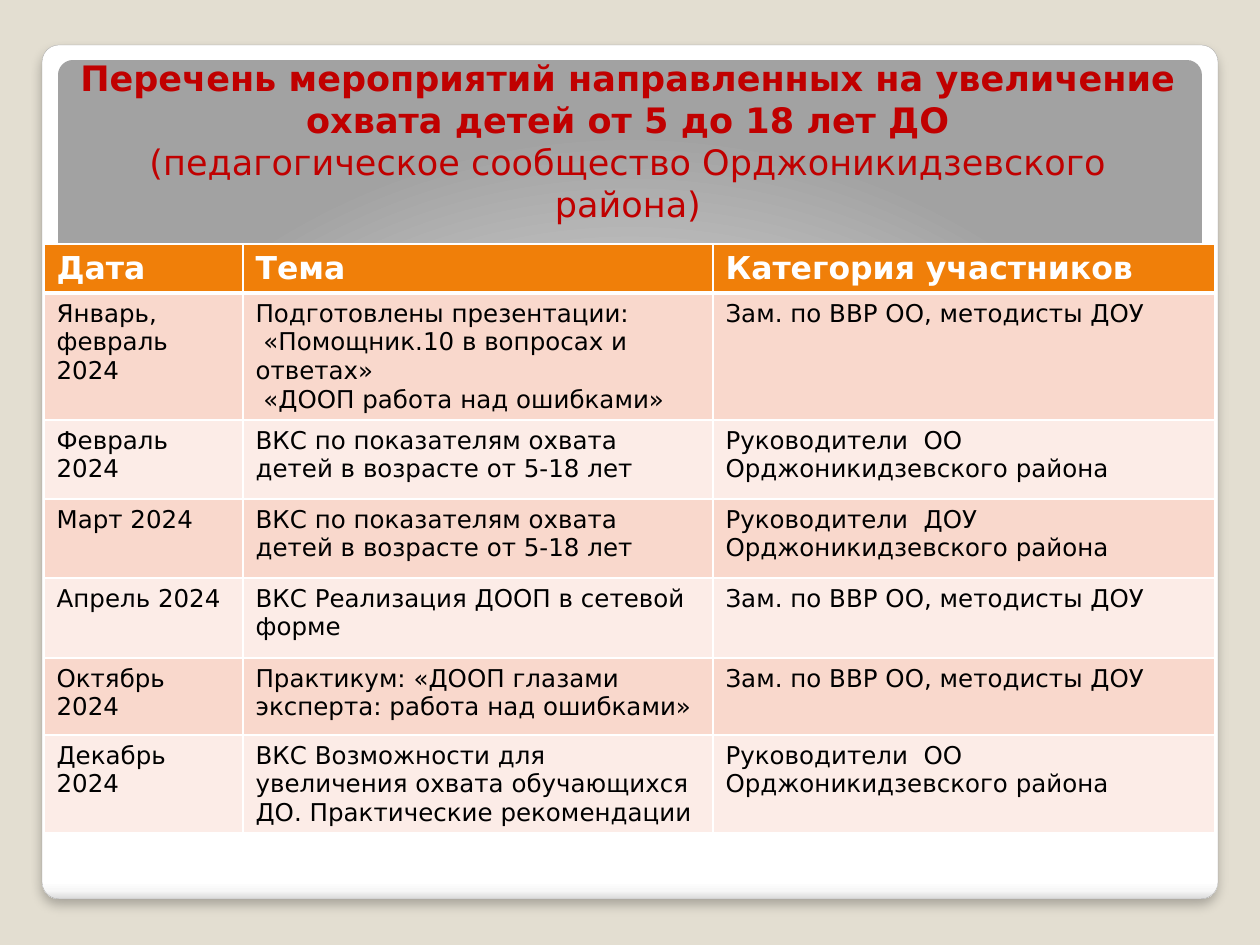
from lxml import etree
from pptx import Presentation, util as u
from pptx.dml.color import RGBColor
from pptx.enum import shapes, text
from pptx.oxml import parse_xml
from pptx.oxml.ns import qn

FONT = "DejaVu Sans"
NS = 'xmlns:a="http://schemas.openxmlformats.org/drawingml/2006/main"'


def px(n):
    return u.Emu(round(n * 914400 / 126))


def add_span(para, words, size, color, bold=False):
    span = para.add_run()
    span.text = words
    span.font.name, span.font.size, span.font.bold = FONT, u.Pt(size), bold
    span.font.color.rgb = RGBColor.from_string(color)


deck = Presentation()
deck.slide_width, deck.slide_height = px(1260), px(945)
page = deck.slides.add_slide(deck.slide_layouts[6])
page.background.fill.solid()
page.background.fill.fore_color.rgb = RGBColor.from_string("E3DED1")

# Rounded card and the grey panel on it: place, gradient stops, direction
panels = [
    ((42, 45, 1176, 854), [(0, "FFFFFF"), (98, "FFFFFF"), (99, "F7F7F7"), (100, "DADADA")],
     '<a:lin ang="5400000" scaled="0"/>'),
    ((58, 60, 1144, 756), [(0, "FFFFFF"), (55, "E1E1E1"), (100, "A2A2A2")],
     '<a:path path="circle"><a:fillToRect l="50000" t="175000" r="50000" b="-75000"/></a:path>'),
]
boxes = []
for place, stops, direction in panels:
    box = page.shapes.add_shape(shapes.MSO_SHAPE.ROUNDED_RECTANGLE, *map(px, place))
    box.adjustments[0] = 0.02
    box.shadow.inherit = False
    box.line.fill.background()
    stop_xml = "".join(f'<a:gs pos="{at * 1000}"><a:srgbClr val="{color}"/></a:gs>'
                       for at, color in stops)
    box._element.spPr.find(qn("a:prstGeom")).addnext(parse_xml(
        f'<a:gradFill {NS} rotWithShape="1"><a:gsLst>{stop_xml}</a:gsLst>{direction}</a:gradFill>'))
    boxes.append(box)

card = boxes[0]
card.line.color.rgb = RGBColor.from_string("A4A4A4")
card.line.width = u.Pt(0.16)
card._element.spPr.find(qn("a:effectLst")).append(parse_xml(
    f'<a:outerShdw {NS} blurRad="76200" dist="50800" dir="5400000" algn="t" rotWithShape="0">'
    '<a:srgbClr val="000000"><a:alpha val="25000"/></a:srgbClr></a:outerShdw>'))

# Title
title = page.shapes.add_textbox(*map(px, (64, 86, 1128, 145))).text_frame
title.word_wrap = True
title.vertical_anchor = text.MSO_ANCHOR.BOTTOM
para = title.paragraphs[0]
para.alignment = text.PP_ALIGN.CENTER
add_span(para, "Перечень мероприятий направленных на увеличение охвата детей от 5 до 18 лет ДО",
         20, "C00000", True)
para.add_line_break()
add_span(para, "(педагогическое сообщество Орджоникидзевского района)", 20, "C00000")

# Schedule table
deputies = "Зам. по ВВР ОО, методисты ДОУ"
heads = "Руководители  ОО Орджоникидзевского района"
coverage = "ВКС по показателям охвата детей в возрасте от 5-18 лет"
rows = [
    ("Дата", "Тема", "Категория участников"),
    ("Январь, февраль 2024",
     "Подготовлены презентации:\n «Помощник.10 в вопросах и ответах»\n «ДООП работа над ошибками»",
     deputies),
    ("Февраль\n2024", coverage, heads),
    ("Март 2024", coverage, "Руководители  ДОУ Орджоникидзевского района"),
    ("Апрель 2024", "ВКС Реализация ДООП в сетевой форме", deputies),
    ("Октябрь\n2024", "Практикум: «ДООП глазами эксперта: работа над ошибками»", deputies),
    ("Декабрь 2024",
     "ВКС Возможности для увеличения охвата обучающихся ДО. Практические рекомендации", heads),
]
widths = [199, 470, 502]
heights = [49, 127, 79, 79, 80, 77, 98]
table = page.shapes.add_table(len(rows), len(widths), px(44), px(244),
                              px(sum(widths)), px(sum(heights))).table
for column, width in zip(table.columns, widths):
    column.width = px(width)

for r, row in enumerate(rows):
    table.rows[r].height = px(heights[r])
    header = r == 0
    fill = "F07F09" if header else ("FCECE7", "F9D8CC")[r % 2]
    for c, words in enumerate(row):
        cell = table.cell(r, c)
        cell.margin_bottom = px(3)
        for i, line in enumerate(words.split("\n")):
            para = cell.text_frame.add_paragraph() if i else cell.text_frame.paragraphs[0]
            add_span(para, line, 18 if header else 14, "FFFFFF" if header else "000000", header)
        cell.fill.solid()
        cell.fill.fore_color.rgb = RGBColor.from_string(fill)
        # White borders, thick between the header and the body
        props = cell._tc.get_or_add_tcPr()
        for i, side in enumerate(("lnL", "lnR", "lnT", "lnB")):
            thick = (r, side) in ((0, "lnB"), (1, "lnT"))
            border = etree.Element(qn(f"a:{side}"), w=str(u.Pt(3 if thick else 1)))
            solid = etree.SubElement(border, qn("a:solidFill"))
            etree.SubElement(solid, qn("a:srgbClr"), val="FFFFFF")
            props.insert(i, border)

deck.save("out.pptx")
